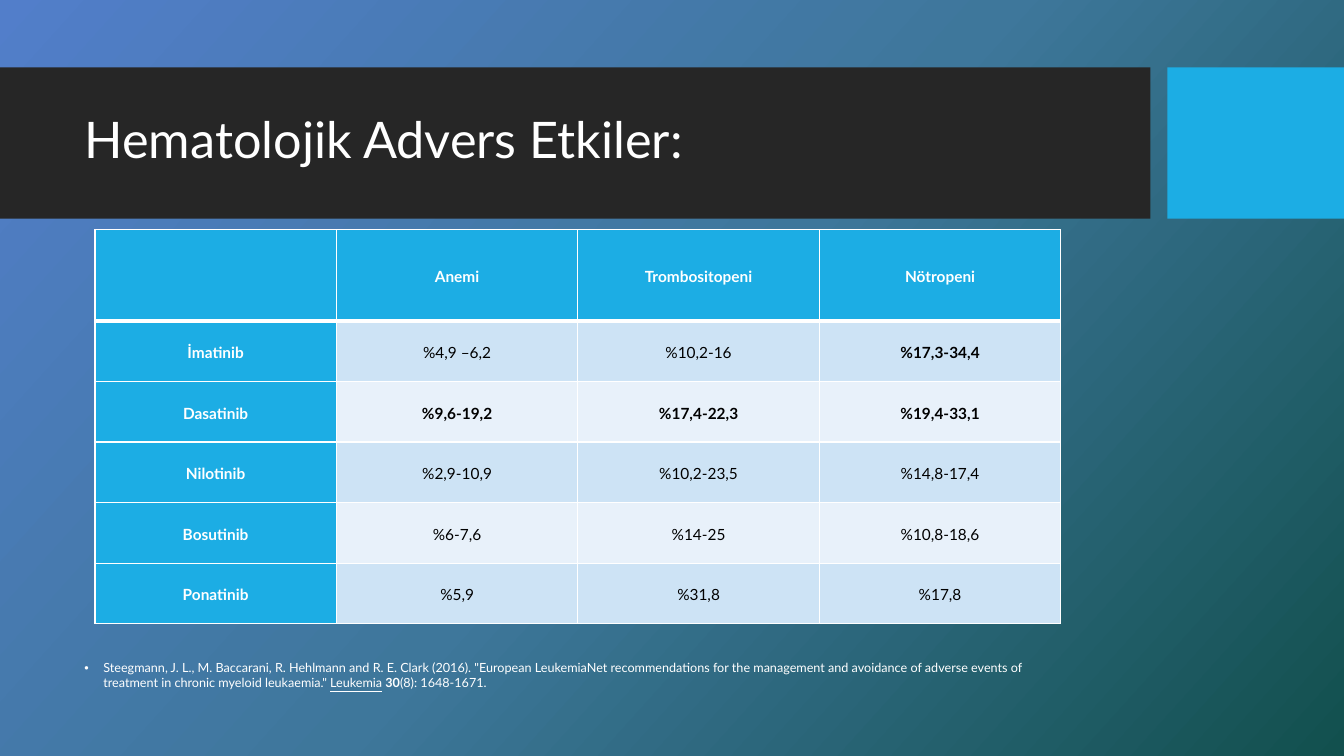
from copy import deepcopy
from lxml import etree
from pptx import Presentation
from pptx.dml.color import RGBColor
from pptx.enum import shapes, text
from pptx.oxml.ns import qn
from pptx.util import Pt

TITLE = "Hematolojik Advers Etkiler:"
HEADS = ["", "Anemi", "Trombositopeni", "Nötropeni"]
RATES = [
    ["İmatinib", "%4,9 –6,2", "%10,2-16", "%17,3-34,4"],
    ["Dasatinib", "%9,6-19,2", "%17,4-22,3", "%19,4-33,1"],
    ["Nilotinib", "%2,9-10,9", "%10,2-23,5", "%14,8-17,4"],
    ["Bosutinib", "%6-7,6", "%14-25", "%10,8-18,6"],
    ["Ponatinib", "%5,9", "%31,8", "%17,8"],
]
STRONG = {(1, 3), (2, 1), (2, 2), (2, 3)}  # row, column of bold rates
CITE = [
    ("Steegmann, J. L., M. Baccarani, R. Hehlmann and R. E. Clark (2016). "
     "\"European LeukemiaNet recommendations for the management and avoidance "
     "of adverse events of treatment in chronic myeloid leukaemia.\" ", ""),
    ("Leukemia", "u"),
    (" ", ""),
    ("30", "b"),
    ("(8): 1648-1671.", ""),
]
THEME = {
    "font": "Lato", "title": 36, "cell": 11, "cite": 9,
    "white": "FFFFFF", "black": "000000", "dark": "262626",
    "accent": "1CADE4", "bands": ["E8F1FA", "CDE3F5"],
    "back": [(0, "527ECA"), (0.5, "3E779B"), (1, "12504E")],
}
WIDE, HIGH = 960, 540
BAR_TOP, BAR_HIGH = 48.2, 108
GRID = (67.8, 164.2, 690, 281.5)
HEAD_HIGH = 65


def tint(name):
    return RGBColor.from_string(THEME.get(name, name))


def style(font, size, color, bold=False):
    font.name, font.size, font.bold = THEME["font"], Pt(THEME[size]), bold
    font.color.rgb = tint(color)


def paint_back(slide):
    fill = slide.background.fill
    fill.gradient()
    fill.gradient_angle = 318
    stops = next(slide.element.iter(qn("a:gsLst")))
    stops.append(deepcopy(stops[-1]))
    for stop, (pos, color) in zip(fill.gradient_stops, THEME["back"]):
        stop.position = pos
        stop.color.rgb = tint(color)


def add_bar(slide, left, width, color):
    bar = slide.shapes.add_shape(shapes.MSO_SHAPE.RECTANGLE, Pt(left),
                                 Pt(BAR_TOP), Pt(width), Pt(BAR_HIGH))
    bar.shadow.inherit = False
    bar.fill.solid()
    bar.fill.fore_color.rgb = tint(color)
    bar.line.fill.background()


def add_title(slide):
    title = slide.shapes.title
    slide.shapes.element.append(title.element)  # in front of the bars
    title.left, title.top = Pt(53.3), Pt(59)
    title.width, title.height = Pt(756.7), Pt(85)
    frame = title.text_frame
    frame.text = TITLE
    frame.vertical_anchor = text.MSO_ANCHOR.MIDDLE
    para = frame.paragraphs[0]
    para.alignment = text.PP_ALIGN.LEFT
    para.line_spacing = 0.9
    style(para.runs[0].font, "title", "white")


def edge(cell, side, width):
    line = etree.SubElement(cell._tc.get_or_add_tcPr(), qn("a:ln" + side),
                            w=str(Pt(width)))
    fill = etree.SubElement(line, qn("a:solidFill"))
    etree.SubElement(fill, qn("a:srgbClr"), val=THEME["white"])


def fill_cell(cell, words, row, col):
    label = row == 0 or col == 0
    for side in "LRTB":
        thick = (row, side) in {(0, "B"), (1, "T")}
        edge(cell, side, 3 if thick else 1)
    cell.fill.solid()
    cell.fill.fore_color.rgb = tint("accent" if label
                                    else THEME["bands"][row % 2])
    cell.vertical_anchor = text.MSO_ANCHOR.MIDDLE
    cell.margin_left = cell.margin_right = Pt(5)
    cell.margin_top = cell.margin_bottom = 0
    para = cell.text_frame.paragraphs[0]
    para.text = words
    para.alignment = text.PP_ALIGN.CENTER
    para.line_spacing = 1.15
    for run in para.runs:
        style(run.font, "cell", "white" if label else "black",
              label or (row, col) in STRONG)


def add_grid(slide):
    rows = [HEADS] + RATES
    table = slide.shapes.add_table(len(rows), len(HEADS),
                                   *map(Pt, GRID)).table
    table.horz_banding = False
    for col in table.columns:
        col.width = Pt(GRID[2] / len(HEADS))
    for r, row in enumerate(rows):
        table.rows[r].height = Pt(
            (GRID[3] - HEAD_HIGH) / len(RATES) if r else HEAD_HIGH)
        for c, words in enumerate(row):
            fill_cell(table.cell(r, c), words, r, c)


def add_cite(slide):
    box = slide.shapes.add_textbox(Pt(53.3), Pt(468), Pt(698.4), Pt(40.3))
    frame = box.text_frame
    frame.word_wrap = True
    para = frame.paragraphs[0]
    props = para._p.get_or_add_pPr()
    props.set("marL", str(Pt(13.5)))
    props.set("indent", str(-Pt(13.5)))
    etree.SubElement(props, qn("a:buFont"), typeface="Arial")
    etree.SubElement(props, qn("a:buChar"), char="•")
    for words, mark in CITE:
        run = para.add_run()
        run.text = words
        style(run.font, "cite", "white", mark == "b")
        run.font.underline = mark == "u"


def main():
    deck = Presentation()
    deck.slide_width, deck.slide_height = Pt(WIDE), Pt(HIGH)
    slide = deck.slides.add_slide(deck.slide_layouts[5])
    paint_back(slide)
    add_bar(slide, 0, 821.8, "dark")
    add_bar(slide, 833.8, WIDE - 833.8, "accent")
    add_title(slide)
    add_grid(slide)
    add_cite(slide)
    deck.save("out.pptx")


if __name__ == "__main__":
    main()
